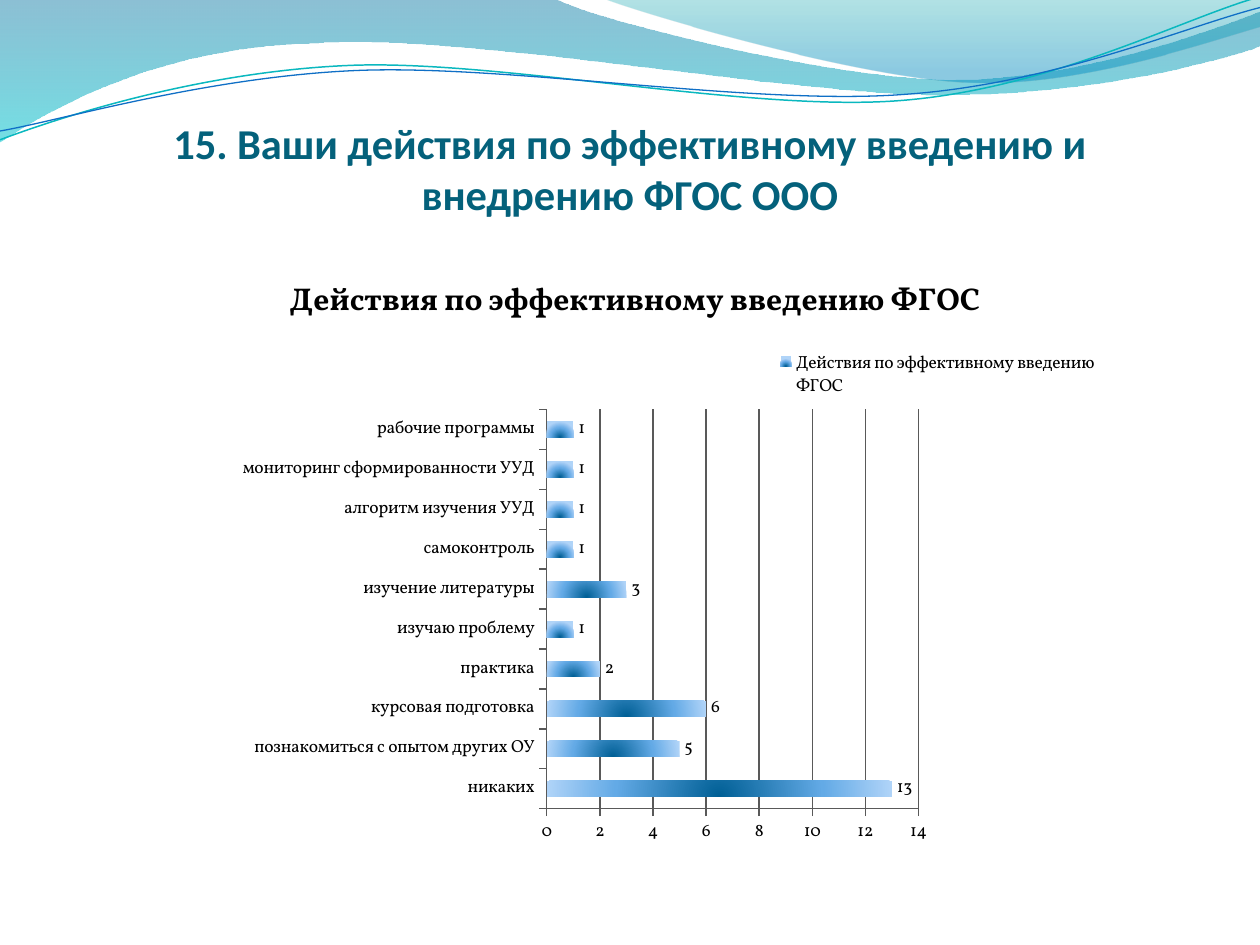
"""Build a slide with a wave header, a title and a bar chart of planned actions."""
from dataclasses import dataclass

import pptx
import pptx.chart.data
import pptx.dml.color
import pptx.enum.chart
import pptx.enum.text
import pptx.oxml
import pptx.oxml.ns
import pptx.util

RGB = pptx.dml.color.RGBColor
EMU_PER_PX = 9144
TEAL = RGB(0x0A, 0xB8, 0xBF)
BLUE = RGB(0x0F, 0x6F, 0xC6)
TITLE = RGB(0x04, 0x61, 0x7B)
BLACK = RGB(0, 0, 0)
GRID = RGB(0x59, 0x59, 0x59)
WAVE_TOP = RGB(0x00, 0x74, 0xA1)
WAVE_BOTTOM = RGB(0x00, 0xC6, 0xCF)
CREST_TOP = RGB(0x00, 0xA1, 0xA9)
CREST_BOTTOM = RGB(0x00, 0x8B, 0xBF)
BAR_CORE = RGB(0x00, 0x5F, 0x95)
BAR_MID = RGB(0x63, 0xAA, 0xE6)
BAR_EDGE = RGB(0xB0, 0xD4, 0xF8)
LINEAR = '<a:lin ang="5400000" scaled="0"/>'
RADIAL = '<a:path path="circle"><a:fillToRect l="50000" t="100000" r="50000"/></a:path>'
CHART_WIDTH, CHART_HEIGHT = 858, 490
CHART_TITLE = "Действия по эффективному введению ФГОС"
ACTIONS = {
    "никаких": 13,
    "познакомиться с опытом других ОУ": 5,
    "курсовая подготовка": 6,
    "практика": 2,
    "изучаю проблему": 1,
    "изучение литературы": 3,
    "самоконтроль": 1,
    "алгоритм изучения УУД": 1,
    "мониторинг сформированности УУД": 1,
    "рабочие программы": 1,
}


@dataclass(frozen=True)
class Stop:
    pos: int
    color: RGB
    alpha: int = 100


@dataclass(frozen=True)
class Wave:
    start: tuple[int, int]
    segments: tuple[tuple[int, ...], ...]
    stops: tuple[Stop, ...] = ()
    line: RGB | None = None
    width: float = 0


WAVES = (
    Wave((0, 0), ((440, -1), (476, 17, 664, 63, 758, 63), (853, 63, 958, 26, 1000, 9),
                  (1001, 36), (983, 44, 870, 76, 746, 75), (622, 75, 382, 28, 257, 34),
                  (129, 36, 46, 83, -1, 113), (0, 0)),
         stops=(Stop(0, WAVE_TOP, 45), Stop(100, WAVE_BOTTOM, 55))),
    Wave((479, -1), ((509, 11, 682, 62, 769, 65), (856, 69, 961, 32, 1000, 21),
                     (1000, 0), (479, -1)),
         stops=(Stop(0, CREST_TOP, 30), Stop(80, CREST_BOTTOM, 45))),
    Wave((0, 111), ((48, 93, 158, 57, 277, 52), (395, 47, 593, 89, 713, 80),
                    (833, 71, 938, 15, 998, -2)), line=TEAL, width=0.85),
    Wave((0, 104), ((47, 96, 164, 61, 283, 56), (403, 51, 597, 84, 717, 75),
                    (836, 67, 941, 21, 1000, 6)), line=BLUE, width=0.75),
)


def px(n: int) -> pptx.util.Emu:
    return pptx.util.Emu(n * EMU_PER_PX)


def set_gradient(fill, element, stops: tuple[Stop, ...], direction: str) -> None:
    fill.gradient()
    old = element.xpath(".//a:gradFill")[0]
    gs = "".join(
        f'<a:gs pos="{s.pos * 1000}"><a:srgbClr val="{s.color}">'
        f'<a:alpha val="{s.alpha * 1000}"/></a:srgbClr></a:gs>' for s in stops)
    new = pptx.oxml.parse_xml(
        f'<a:gradFill {pptx.oxml.ns.nsdecls("a")} rotWithShape="1">'
        f"<a:gsLst>{gs}</a:gsLst>{direction}</a:gradFill>")
    old.getparent().replace(old, new)


def bend_segments(sp, segments: tuple[tuple[int, ...], ...]) -> None:
    lines = iter(sp.element.xpath(".//a:path/a:lnTo"))
    for seg in segments:
        group = [next(lines) for _ in range(len(seg) // 2)]
        if len(group) == 3:
            curve = pptx.oxml.parse_xml(
                f'<a:cubicBezTo {pptx.oxml.ns.nsdecls("a")}/>')
            group[0].addprevious(curve)
            for line in group:
                curve.append(line[0])
                line.getparent().remove(line)


def add_wave(s, wave: Wave) -> None:
    builder = s.shapes.build_freeform(*wave.start, scale=EMU_PER_PX)
    points = [pt for seg in wave.segments for pt in zip(seg[::2], seg[1::2])]
    builder.add_line_segments(points, close=bool(wave.stops))
    sp = builder.convert_to_shape()
    bend_segments(sp, wave.segments)
    sp.shadow.inherit = False
    if wave.stops:
        set_gradient(sp.fill, sp.element, wave.stops, LINEAR)
        sp.line.fill.background()
    else:
        sp.fill.background()
        sp.line.color.rgb = wave.line
        sp.line.width = pptx.util.Pt(wave.width)


def set_font(font, size: float, color: RGB, name: str, bold: bool = False) -> None:
    font.size, font.name, font.bold = pptx.util.Pt(size), name, bold
    font.color.rgb = color


def add_title(s) -> None:
    tf = s.shapes.add_textbox(px(50), px(77), px(900), px(172)).text_frame
    tf.word_wrap = True
    tf.vertical_anchor = pptx.enum.text.MSO_ANCHOR.BOTTOM
    tf.margin_left = tf.margin_right = 0
    tf.margin_top, tf.margin_bottom = px(5), px(75)
    p = tf.paragraphs[0]
    p.alignment = pptx.enum.text.PP_ALIGN.CENTER
    r = p.add_run()
    r.text = "15. Ваши действия по эффективному введению и внедрению ФГОС ООО"
    set_font(r.font, 24.3, TITLE, "Calibri", True)


def layout_xml(x: int, y: int, w: int, h: int, inner: bool = False):
    target = '<c:layoutTarget val="inner"/>' if inner else ""
    return pptx.oxml.parse_xml(
        f'<c:layout {pptx.oxml.ns.nsdecls("c")}><c:manualLayout>{target}'
        '<c:xMode val="edge"/><c:yMode val="edge"/>'
        f'<c:x val="{x / CHART_WIDTH}"/><c:y val="{y / CHART_HEIGHT}"/>'
        f'<c:w val="{w / CHART_WIDTH}"/><c:h val="{h / CHART_HEIGHT}"/>'
        "</c:manualLayout></c:layout>")


def style_axis(axis) -> None:
    axis.major_tick_mark = pptx.enum.chart.XL_TICK_MARK.OUTSIDE
    axis.minor_tick_mark = pptx.enum.chart.XL_TICK_MARK.NONE
    axis.format.line.color.rgb = GRID
    axis.format.line.width = pptx.util.Pt(0.75)


def add_actions_chart(s) -> None:
    data = pptx.chart.data.CategoryChartData()
    data.categories = list(ACTIONS)
    data.add_series(CHART_TITLE, list(ACTIONS.values()))
    chart = s.shapes.add_chart(pptx.enum.chart.XL_CHART_TYPE.BAR_CLUSTERED, px(75), px(200),
                               px(CHART_WIDTH), px(CHART_HEIGHT), data).chart
    set_font(chart.font, 10, BLACK, "Vollkorn")
    chart.has_title = True
    r = chart.chart_title.text_frame.paragraphs[0].add_run()
    r.text = CHART_TITLE
    set_font(r.font, 18, BLACK, "Vollkorn", True)

    chart.has_legend = True
    chart.legend.position = pptx.enum.chart.XL_LEGEND_POSITION.RIGHT
    chart.legend.include_in_layout = False
    legend_pos = chart.element.xpath(".//c:legend/c:legendPos")[0]
    legend_pos.addnext(layout_xml(536, 74, 266, 49))
    area = chart.element.xpath(".//c:plotArea")[0]
    for old in area.xpath("./c:layout"):
        area.remove(old)
    area.insert(0, layout_xml(359, 125, 295, 317, inner=True))

    style_axis(chart.category_axis)
    axis = chart.value_axis
    style_axis(axis)
    axis.minimum_scale, axis.maximum_scale, axis.major_unit = 0, 14, 2
    axis.has_major_gridlines = True
    axis.major_gridlines.format.line.color.rgb = GRID
    axis.major_gridlines.format.line.width = pptx.util.Pt(0.75)

    plot = chart.plots[0]
    plot.vary_by_categories = False
    plot.gap_width = 150
    series = plot.series[0]
    set_gradient(series.format.fill, chart.element,
                 (Stop(0, BAR_CORE), Stop(60, BAR_MID), Stop(100, BAR_EDGE)), RADIAL)
    labels = series.data_labels
    labels.show_value = True
    labels.position = pptx.enum.chart.XL_LABEL_POSITION.OUTSIDE_END


def main() -> None:
    prs = pptx.Presentation()
    prs.slide_width, prs.slide_height = px(1000), px(750)
    s = prs.slides.add_slide(prs.slide_layouts[6])
    for wave in WAVES:
        add_wave(s, wave)
    add_title(s)
    add_actions_chart(s)
    prs.save("out.pptx")


if __name__ == "__main__":
    main()
